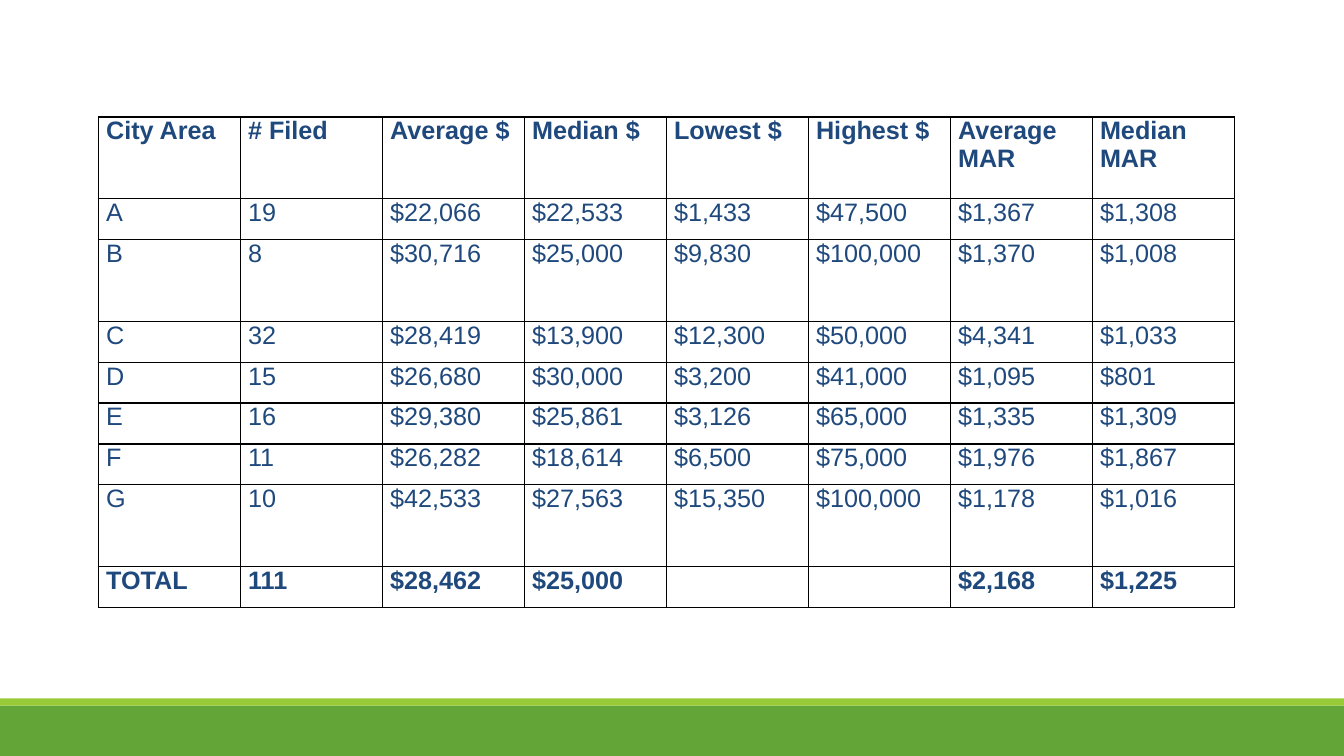
from lxml import etree
from pptx import Presentation
from pptx.dml.color import RGBColor
from pptx.enum import shapes
from pptx.oxml import ns
from pptx.util import Pt

WHITE = RGBColor(0xFF, 0xFF, 0xFF)
BLACK = RGBColor(0x00, 0x00, 0x00)
NAVY = RGBColor(0x1F, 0x49, 0x7D)
GREEN = RGBColor(0x63, 0xA5, 0x37)
LIME = RGBColor(0x99, 0xCB, 0x38)

ROWS = [
    ["City Area", "# Filed", "Average $", "Median $", "Lowest $", "Highest $", "Average MAR", "Median MAR"],
    ["A", "19", "$22,066", "$22,533", "$1,433", "$47,500", "$1,367", "$1,308"],
    ["B", "8", "$30,716", "$25,000", "$9,830", "$100,000", "$1,370", "$1,008"],
    ["C", "32", "$28,419", "$13,900", "$12,300", "$50,000", "$4,341", "$1,033"],
    ["D", "15", "$26,680", "$30,000", "$3,200", "$41,000", "$1,095", "$801"],
    ["E", "16", "$29,380", "$25,861", "$3,126", "$65,000", "$1,335", "$1,309"],
    ["F", "11", "$26,282", "$18,614", "$6,500", "$75,000", "$1,976", "$1,867"],
    ["G", "10", "$42,533", "$27,563", "$15,350", "$100,000", "$1,178", "$1,016"],
    ["TOTAL", "111", "$28,462", "$25,000", "", "", "$2,168", "$1,225"],
]
TALL_ROWS = ("City Area", "B", "G")
BOLD_ROWS = ("City Area", "TOTAL")
ROW_HEIGHT = 29.2
COLUMN_WIDTH = 101.45


def add_borders(cell):
    properties = cell._tc.get_or_add_tcPr()
    for side in ("lnL", "lnR", "lnT", "lnB"):
        line = etree.SubElement(properties, ns.qn("a:" + side), w=str(Pt(1)))
        fill = etree.SubElement(line, ns.qn("a:solidFill"))
        etree.SubElement(fill, ns.qn("a:srgbClr"), val=str(BLACK))


deck = Presentation()
deck.slide_width = Pt(960)
deck.slide_height = Pt(540)
page = deck.slides.add_slide(deck.slide_layouts[6])

for top, height, color in ((504, 36, GREEN), (498.8, 5.2, LIME)):
    band = page.shapes.add_shape(
        shapes.MSO_SHAPE.RECTANGLE, Pt(0), Pt(top), deck.slide_width, Pt(height))
    band.shadow.inherit = False
    band.fill.solid()
    band.fill.fore_color.rgb = color
    band.line.fill.background()

units = len(ROWS) + len(TALL_ROWS)
frame = page.shapes.add_table(
    len(ROWS), len(ROWS[0]), Pt(70.4), Pt(83.5),
    Pt(COLUMN_WIDTH * len(ROWS[0])), Pt(ROW_HEIGHT * units))
table = frame.table
table.first_row = False
table.horz_banding = False
for column in table.columns:
    column.width = Pt(COLUMN_WIDTH)

for row, values in zip(table.rows, ROWS):
    row.height = Pt(ROW_HEIGHT * (2 if values[0] in TALL_ROWS else 1))
    for cell, value in zip(row.cells, values):
        add_borders(cell)
        cell.fill.solid()
        cell.fill.fore_color.rgb = WHITE
        cell.margin_left = cell.margin_right = Pt(5.4)
        cell.margin_top = cell.margin_bottom = Pt(0)
        cell.text = value
        para = cell.text_frame.paragraphs[0]
        para.font.name = "Arial"
        para.font.size = Pt(18)
        para.font.bold = values[0] in BOLD_ROWS
        para.font.color.rgb = NAVY

deck.save("out.pptx")
